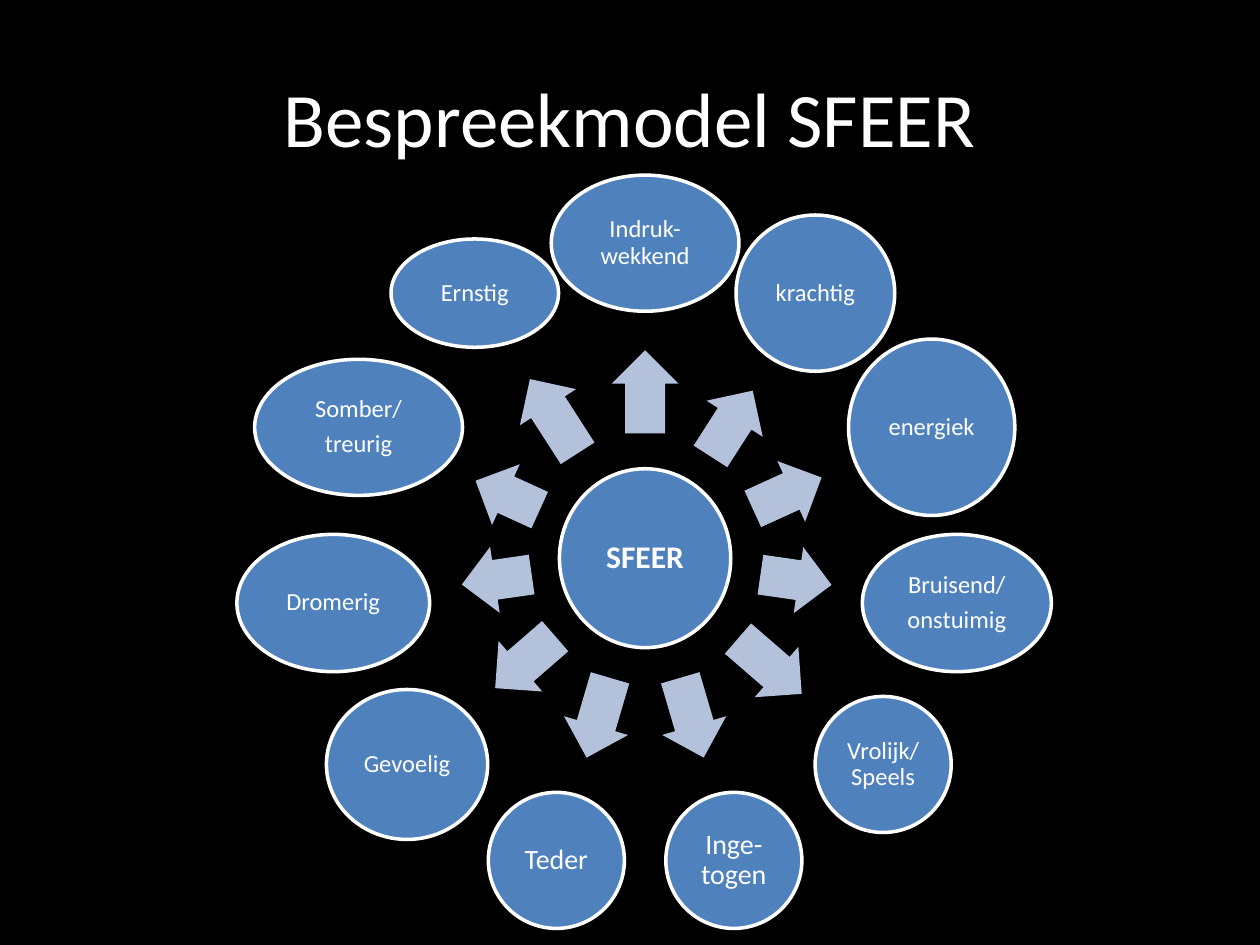
from math import cos, radians, sin

from pptx import Presentation
from pptx import util as u
from pptx.dml.color import RGBColor
from pptx.enum import shapes, text

TITLE = "Bespreekmodel SFEER"
HUB = ("SFEER", 1.36, 1.42)
# Clockwise from the top:
# lines, ellipse width and height, font size, arrow length, arrow distance from hub
MOODS = [
    (["Indruk-wekkend"], 1.49, 1.08, 14, 0.66, 1.32),
    (["krachtig"], 1.26, 1.24, 14, 0.62, 1.27),
    (["energiek"], 1.32, 1.40, 14, 0.60, 1.24),
    (["Bruisend/", "onstuimig"], 1.50, 1.09, 14, 0.57, 1.21),
    (["Vrolijk/ Speels"], 1.08, 1.08, 14, 0.67, 1.31),
    (["Inge-togen"], 1.08, 1.08, 16, 0.66, 1.32),
    (["Teder"], 1.08, 1.08, 16, 0.66, 1.32),
    (["Gevoelig"], 1.28, 1.19, 14, 0.63, 1.26),
    (["Dromerig"], 1.53, 1.09, 14, 0.56, 1.19),
    (["Somber/", "treurig"], 1.65, 1.08, 14, 0.56, 1.20),
    (["Ernstig"], 1.33, 0.86, 14, 0.70, 1.34),
]

CENTER_X, CENTER_Y = 5.12, 4.43
RING_RADIUS = 2.5
ARROW_WIDTH = 0.53
BLACK, WHITE, BLUE, PALE_BLUE = "000000", "FFFFFF", "4F81BD", "B3C1DB"


def paint(fill, color):
    fill.solid()
    fill.fore_color.rgb = RGBColor.from_string(color)


def write(frame, lines, size, bold=False, inset=0.02, spacing=None, after=0):
    """Fill a text frame with centred white lines; after is a share of the size."""
    frame.word_wrap = True
    frame.vertical_anchor = text.MSO_ANCHOR.MIDDLE
    frame.margin_left = frame.margin_right = u.Inches(inset)
    frame.margin_top = frame.margin_bottom = u.Inches(inset)
    for i, line in enumerate(lines):
        paragraph = frame.add_paragraph() if i else frame.paragraphs[0]
        paragraph.alignment = text.PP_ALIGN.CENTER
        paragraph.line_spacing = spacing
        paragraph.space_after = u.Pt(size * after)
        run = paragraph.add_run()
        run.text = line
        run.font.name = "Calibri"
        run.font.size = u.Pt(size)
        run.font.bold = bold
        run.font.color.rgb = RGBColor.from_string(WHITE)


def add_centered(slide, kind, x, y, width, height, color):
    shape = slide.shapes.add_shape(
        kind, u.Inches(x - width / 2), u.Inches(y - height / 2),
        u.Inches(width), u.Inches(height))
    shape.shadow.inherit = False
    paint(shape.fill, color)
    return shape


def add_bubble(slide, lines, x, y, width, height, size, **style):
    bubble = add_centered(slide, shapes.MSO_SHAPE.OVAL, x, y, width, height, BLUE)
    paint(bubble.line.fill, WHITE)
    bubble.line.width = u.Pt(2)
    write(bubble.text_frame, lines, size, spacing=0.9, after=0.35, **style)


def add_arrow(slide, x, y, length, rotation):
    arrow = add_centered(slide, shapes.MSO_SHAPE.RIGHT_ARROW, x, y,
                         length, ARROW_WIDTH, PALE_BLUE)
    arrow.line.fill.background()
    arrow.adjustments[0], arrow.adjustments[1] = 0.6, 0.5
    arrow.rotation = rotation


def on_ring(angle, radius):
    return (CENTER_X + radius * cos(radians(angle)),
            CENTER_Y + radius * sin(radians(angle)))


def main():
    prs = Presentation()
    prs.slide_width, prs.slide_height = u.Inches(10), u.Inches(7.5)
    slide = prs.slides.add_slide(prs.slide_layouts[5])
    paint(slide.background.fill, BLACK)

    title = slide.shapes.title
    title.left, title.top = u.Inches(0.5), u.Inches(0.3)
    title.width, title.height = u.Inches(9), u.Inches(1.25)
    write(title.text_frame, [TITLE], 44, inset=0.05)

    hub_name, hub_width, hub_height = HUB
    add_bubble(slide, [hub_name], CENTER_X, CENTER_Y, hub_width, hub_height,
               18, bold=True, inset=0.03)
    for i, (lines, width, height, size, length, distance) in enumerate(MOODS):
        angle = (270 + i * 360 / len(MOODS)) % 360
        add_arrow(slide, *on_ring(angle, distance), length, angle)
        add_bubble(slide, lines, *on_ring(angle, RING_RADIUS), width, height, size)

    prs.save("out.pptx")


if __name__ == "__main__":
    main()
